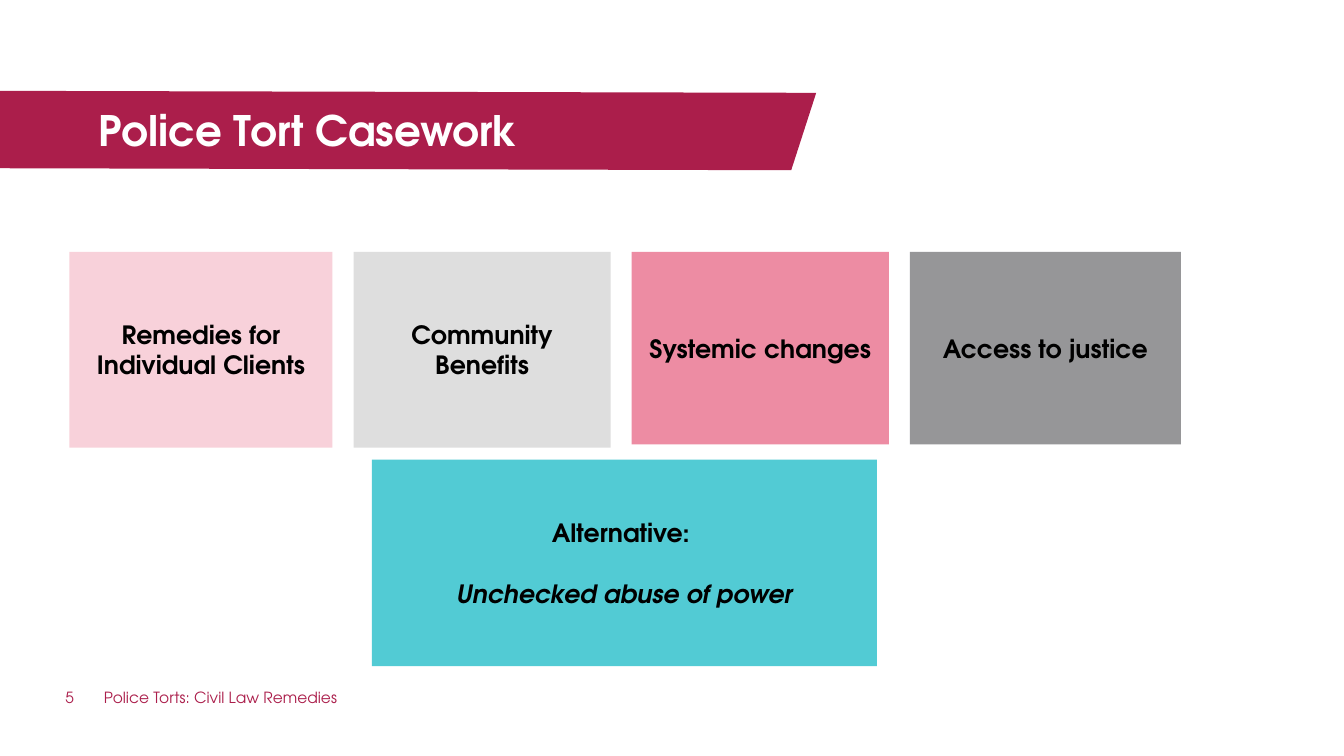
from pptx import Presentation
from pptx.dml.color import RGBColor
from pptx.enum.shapes import MSO_SHAPE
from pptx.enum.text import MSO_ANCHOR, PP_ALIGN
from pptx.util import Cm, Pt

RECTANGLE = MSO_SHAPE.RECTANGLE
MIDDLE, TOP = MSO_ANCHOR.MIDDLE, MSO_ANCHOR.TOP
CENTER, LEFT = PP_ALIGN.CENTER, PP_ALIGN.LEFT

CRIMSON = RGBColor(0xAB, 0x1E, 0x4B)
BLUSH = RGBColor(0xF8, 0xD1, 0xDA)
SILVER = RGBColor(0xDE, 0xDE, 0xDE)
ROSE = RGBColor(0xED, 0x8C, 0xA3)
GRAY = RGBColor(0x96, 0x96, 0x98)
TURQUOISE = RGBColor(0x52, 0xCB, 0xD4)
BLACK = RGBColor(0, 0, 0)
WHITE = RGBColor(0xFF, 0xFF, 0xFF)

CARD_LEFT, CARD_TOP, CARD_GAP = 1.75, 6.35, 0.53
CARDS = [
    ("Remedies for Individual Clients", BLUSH, 6.63, 4.93),
    ("Community Benefits", SILVER, 6.48, 4.93),
    ("Systemic changes", ROSE, 6.48, 4.85),
    ("Access to justice", GRAY, 6.83, 4.85),
]
FOOTER_TOP, FOOTER_HEIGHT = 17.35, 0.89


class SlideBuilder:
    """Draws styled elements on one slide, with all lengths in centimetres."""

    font_name = "TeX Gyre Adventor"

    def __init__(self, slide):
        self.slide = slide

    def paint(self, shape, color):
        shape.shadow.inherit = False
        shape.fill.solid()
        shape.fill.fore_color.rgb = color
        shape.line.fill.background()

    def style_text(self, frame, size, color, bold, align):
        frame.word_wrap = True
        for para in frame.paragraphs:
            para.alignment = align
            for span in para.runs:
                span.font.name = self.font_name
                span.font.size = Pt(size)
                span.font.bold = bold
                span.font.color.rgb = color

    def banner(self, points, color):
        corners = [(Cm(x), Cm(y)) for x, y in points]
        builder = self.slide.shapes.build_freeform(*corners[0])
        builder.add_line_segments(corners[1:], close=True)
        self.paint(builder.convert_to_shape(), color)

    def label(self, text, left, top, width, height, size, color, bold=False):
        box = self.slide.shapes.add_textbox(Cm(left), Cm(top), Cm(width), Cm(height))
        frame = box.text_frame
        frame.margin_left = frame.margin_right = 0
        frame.margin_top = frame.margin_bottom = 0
        frame.vertical_anchor = TOP
        frame.text = text
        self.style_text(frame, size, color, bold, LEFT)

    def card(self, text, color, left, top, width, height):
        box = self.slide.shapes.add_shape(
            RECTANGLE, Cm(left), Cm(top), Cm(width), Cm(height))
        self.paint(box, color)
        frame = box.text_frame
        frame.vertical_anchor = MIDDLE
        frame.text = text
        self.style_text(frame, 18, BLACK, True, CENTER)
        return box


def main():
    deck = Presentation()
    deck.slide_width, deck.slide_height = Cm(33.87), Cm(19.05)
    page = SlideBuilder(deck.slides.add_slide(deck.slide_layouts[6]))

    page.banner([(0, 2.29), (20.57, 2.34), (19.94, 4.29), (0, 4.24)], CRIMSON)
    page.label("Police Tort Casework", 2.49, 2.64, 17.32, 1.24, 30, WHITE, bold=True)

    left = CARD_LEFT
    for text, color, width, height in CARDS:
        page.card(text, color, left, CARD_TOP, width, height)
        left += width + CARD_GAP

    alternative = page.card("Alternative: \nUnchecked abuse of power", TURQUOISE,
                            9.37, 11.58, 12.73, 5.21)
    outcome = alternative.text_frame.paragraphs[1]
    outcome.space_before = Pt(22)
    outcome.runs[0].font.italic = True

    page.label("5", 1.65, FOOTER_TOP, 0.94, FOOTER_HEIGHT, 11, CRIMSON)
    page.label("Police Torts: Civil Law Remedies", 2.62, FOOTER_TOP, 15.6,
               FOOTER_HEIGHT, 11, CRIMSON)

    deck.save("out.pptx")


if __name__ == "__main__":
    main()
